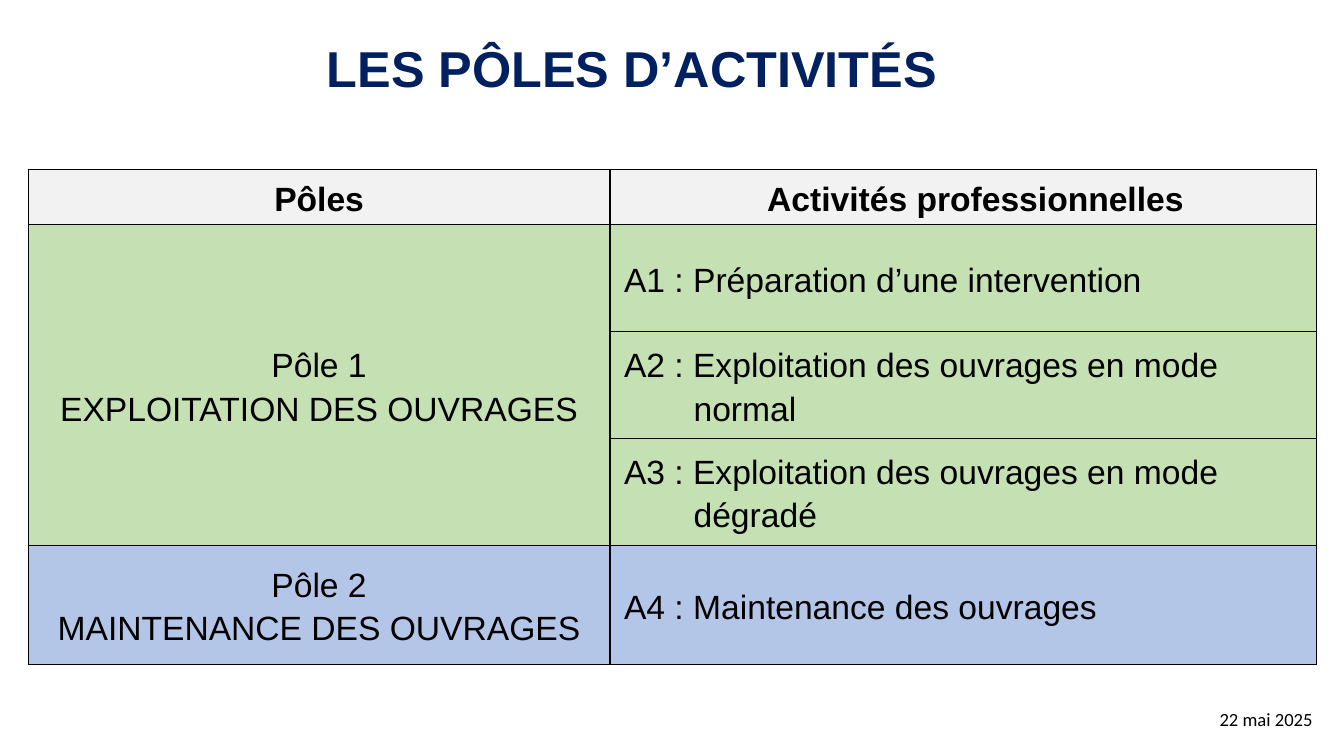
from dataclasses import dataclass

from lxml import etree
from pptx import Presentation
from pptx.dml.color import RGBColor
from pptx.enum.text import MSO_ANCHOR, MSO_AUTO_SIZE, PP_ALIGN
from pptx.oxml.ns import qn
from pptx.util import Inches, Pt

LEFT, CENTER, RIGHT = PP_ALIGN.LEFT, PP_ALIGN.CENTER, PP_ALIGN.RIGHT
TOP, MIDDLE = MSO_ANCHOR.TOP, MSO_ANCHOR.MIDDLE
GROW = MSO_AUTO_SIZE.SHAPE_TO_FIT_TEXT
TITLE_ONLY = 5


@dataclass(frozen=True)
class Theme:
    font: str = "Arial"
    small_font: str = "Calibri"
    navy: str = "002060"
    black: str = "000000"
    grey: str = "F2F2F2"
    green: str = "C5E0B3"
    blue: str = "B4C6E7"
    title: float = 36
    body: float = 24
    date: float = 13.3
    border: float = 1


THEME = Theme()

# Column widths, row heights and table content
COLS = (5.77, 7.01)
ROWS = (0.55, 1.06, 1.06, 1.06, 1.18)
HEADS = ("Pôles", "Activités professionnelles")
POLES = (
    (("Pôle 1", "EXPLOITATION DES OUVRAGES"), THEME.green, (
        ("A1 : Préparation d’une intervention", 0.09, 0),
        ("A2 : Exploitation des ouvrages en mode normal", 0.78, -0.69),
        ("A3 : Exploitation des ouvrages en mode dégradé", 0.78, -0.69),
    )),
    (("Pôle 2", "MAINTENANCE DES OUVRAGES"), THEME.blue, (
        ("A4 : Maintenance des ouvrages", 0.09, 0),
    )),
)


def add_lines(frame, lines, size, color=THEME.black, font=THEME.font,
              bold=False, align=CENTER, space=1.15):
    """Write each line as a paragraph with one run."""
    for i, line in enumerate(lines):
        para = frame.paragraphs[0] if i == 0 else frame.add_paragraph()
        para.alignment = align
        para.line_spacing = space
        run = para.add_run()
        run.text = line
        run.font.size = Pt(size)
        run.font.name = font
        run.font.bold = bold
        run.font.color.rgb = RGBColor.from_string(color)


def set_box(shape, left, top, width, height):
    shape.left, shape.top = Inches(left), Inches(top)
    shape.width, shape.height = Inches(width), Inches(height)


def indent(cell, left, first=0):
    props = cell.text_frame.paragraphs[0]._p.get_or_add_pPr()
    props.set("marL", str(Inches(left)))
    props.set("indent", str(Inches(first)))


def style_cell(cell, fill):
    """Set margins, four borders and the fill."""
    cell.margin_left = cell.margin_right = Inches(0.05)
    cell.margin_top = cell.margin_bottom = 0
    cell.vertical_anchor = MIDDLE
    props = cell._tc.get_or_add_tcPr()
    for side in ("a:lnL", "a:lnR", "a:lnT", "a:lnB"):
        line = etree.SubElement(props, qn(side), w=str(Pt(THEME.border)))
        solid = etree.SubElement(line, qn("a:solidFill"))
        etree.SubElement(solid, qn("a:srgbClr"), val=THEME.black)
    cell.fill.solid()
    cell.fill.fore_color.rgb = RGBColor.from_string(fill)


def add_title(slide, text):
    title = slide.shapes.title
    set_box(title, 1.88, 0.23, 8.78, 0.74)
    frame = title.text_frame
    frame.word_wrap = True
    frame.auto_size = GROW
    frame.vertical_anchor = TOP
    add_lines(frame, [text], THEME.title, THEME.navy, bold=True)


def add_grid(slide):
    shape = slide.shapes.add_table(
        len(ROWS), len(COLS), Inches(0.28), Inches(1.68),
        Inches(sum(COLS)), Inches(sum(ROWS)))
    grid = shape.table
    grid.first_row = grid.horz_banding = False
    for col, width in zip(grid.columns, COLS):
        col.width = Inches(width)
    for row, height in zip(grid.rows, ROWS):
        row.height = Inches(height)

    # Header row
    for i, head in enumerate(HEADS):
        cell = grid.cell(0, i)
        style_cell(cell, THEME.grey)
        add_lines(cell.text_frame, [head], THEME.body, bold=True)
    indent(grid.cell(0, 1), 0.24)

    # One merged pole cell beside its tasks
    start = 1
    for names, fill, tasks in POLES:
        for row, (text, left, first) in enumerate(tasks, start):
            style_cell(grid.cell(row, 0), fill)
            cell = grid.cell(row, 1)
            style_cell(cell, fill)
            add_lines(cell.text_frame, [text], THEME.body, align=LEFT)
            indent(cell, left, first)
        pole = grid.cell(start, 0)
        add_lines(pole.text_frame, names, THEME.body)
        if len(tasks) > 1:
            pole.merge(grid.cell(start + len(tasks) - 1, 0))
        start += len(tasks)


def add_date(slide, text):
    box = slide.shapes.add_textbox(
        Inches(9.89), Inches(7.06), Inches(3.15), Inches(0.35))
    frame = box.text_frame
    frame.word_wrap = True
    frame.margin_left = frame.margin_right = Inches(0.02)
    frame.margin_top = frame.margin_bottom = Inches(0.02)
    add_lines(frame, [text], THEME.date, font=THEME.small_font,
              align=RIGHT, space=0.7)


def main():
    deck = Presentation()
    deck.slide_width, deck.slide_height = Inches(13.33), Inches(7.5)
    slide = deck.slides.add_slide(deck.slide_layouts[TITLE_ONLY])
    add_title(slide, "LES PÔLES D’ACTIVITÉS")
    add_grid(slide)
    add_date(slide, "22 mai 2025")
    deck.save("out.pptx")


if __name__ == "__main__":
    main()
